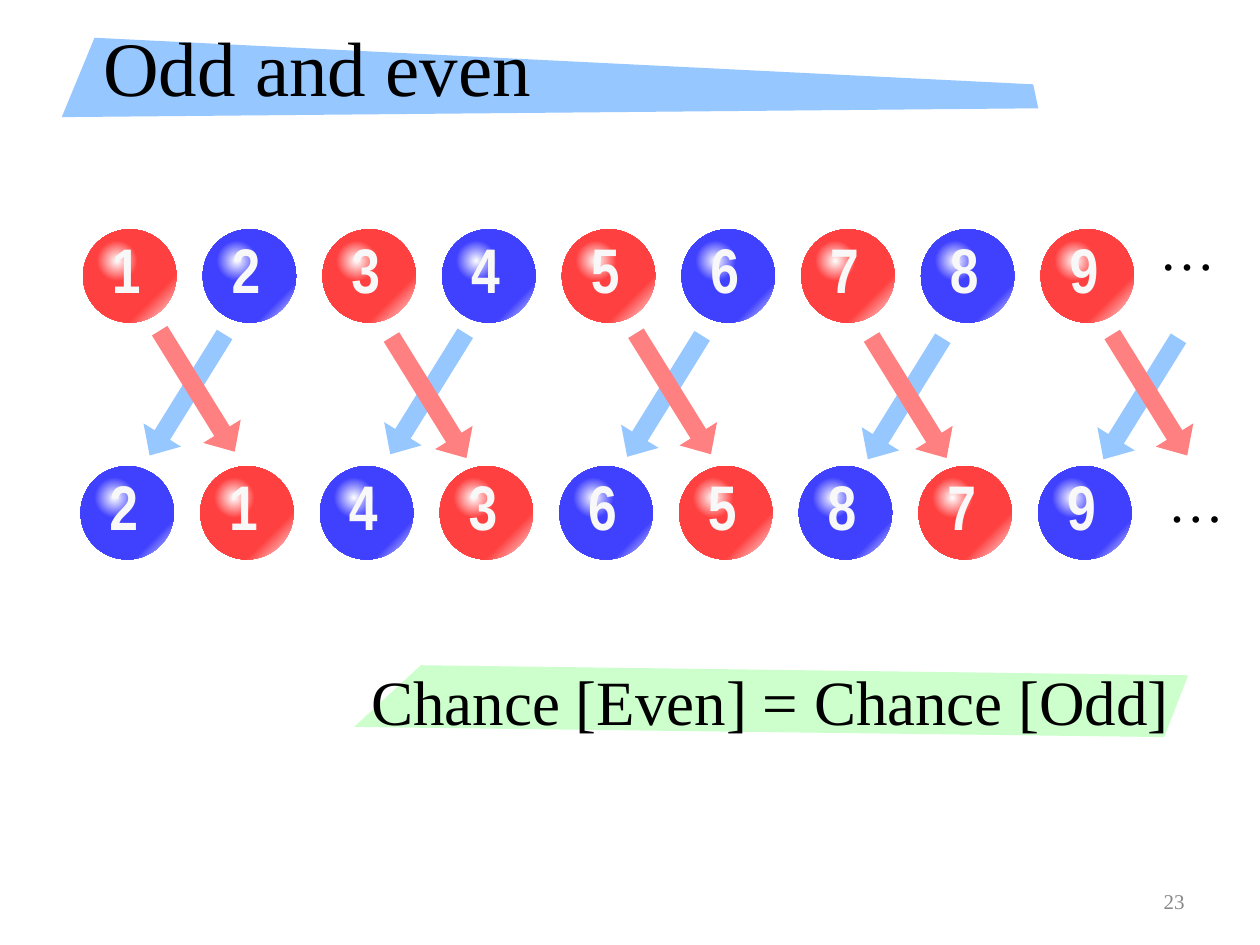
import lxml.etree
import pptx
import pptx.dml.color
import pptx.enum.shapes
import pptx.enum.text
import pptx.util

Inches = pptx.util.Inches
SHAPE = pptx.enum.shapes.MSO_SHAPE
ANCHOR = pptx.enum.text.MSO_ANCHOR
ALIGN = pptx.enum.text.PP_ALIGN
DRAWING_NS = "http://schemas.openxmlformats.org/drawingml/2006/main"

COLORS = {
    "odd": "FF4040",
    "even": "4040FF",
    "odd_arrow": "FF8080",
    "even_arrow": "96C7FF",
    "title_band": "96C7FF",
    "result_band": "CCFFCC",
    "highlight": "FFFFFF",
    "digit": "F8F8F8",
    "text": "000000",
    "page": "898989",
}
PITCH = 0.95
BALL_SIZE = 0.74
SHINE_SIZE = 0.36


def rgb(name):
    return pptx.dml.color.RGBColor.from_string(COLORS[name])


class Board:
    """Holds the text style and the current slide."""

    serif = "Times New Roman"
    digit_font = "Arial Narrow"

    def __init__(self, slide):
        self.slide = slide
        self.shapes = slide.shapes

    def format_text(self, frame, text, size, color="text", font=None, align=ALIGN.LEFT):
        frame.text = text
        line = frame.paragraphs[0]
        line.alignment = align
        line.font.name = font or self.serif
        line.font.size = pptx.util.Pt(size)
        line.font.color.rgb = rgb(color)
        return line

    def title(self, text, left, top, width, height):
        title = self.shapes.title
        title.left, title.top = Inches(left), Inches(top)
        title.width, title.height = Inches(width), Inches(height)
        title.text_frame.auto_size = pptx.enum.text.MSO_AUTO_SIZE.NONE
        title.text_frame.vertical_anchor = ANCHOR.MIDDLE
        self.format_text(title.text_frame, text, 44)
        self.shapes._spTree.append(title._element)  # in front of its band

    def label(self, text, left, top, width, height, size, wrap=False,
              anchor=ANCHOR.TOP, **style):
        box = self.shapes.add_textbox(
            Inches(left), Inches(top), Inches(width), Inches(height))
        box.text_frame.word_wrap = wrap
        box.text_frame.vertical_anchor = anchor
        return self.format_text(box.text_frame, text, size, **style)

    def finish(self, shape, color=None):
        shape.shadow.inherit = False
        shape.line.fill.background()
        if color:
            shape.fill.solid()
            shape.fill.fore_color.rgb = rgb(color)

    def band(self, corners, color):
        points = [(Inches(x), Inches(y)) for x, y in corners]
        outline = self.shapes.build_freeform(*points[0])
        outline.add_line_segments(points[1:], close=True)
        self.finish(outline.convert_to_shape(), color)

    def glowing_circle(self, left, top, size, stops, focus):
        """Circle with a radial gradient; focus is (left, top, right, bottom) in percent."""
        circle = self.shapes.add_shape(
            SHAPE.OVAL, Inches(left), Inches(top), Inches(size), Inches(size))
        self.finish(circle)
        stop_xml = "".join(
            f'<a:gs pos="{position * 1000}"><a:srgbClr val="{COLORS[color]}"/></a:gs>'
            for position, color in stops)
        focus_xml = " ".join(
            f'{side}="{percent * 1000}"' for side, percent in zip("ltrb", focus))
        gradient = lxml.etree.fromstring(
            f'<a:gradFill xmlns:a="{DRAWING_NS}" rotWithShape="1">'
            f'<a:gsLst>{stop_xml}</a:gsLst>'
            f'<a:path path="circle"><a:fillToRect {focus_xml}/></a:path></a:gradFill>')
        circle._element.spPr.find(f"{{{DRAWING_NS}}}prstGeom").addnext(gradient)

    def ball(self, left, top, kind):
        edge = 74 if kind == "odd" else 78
        self.glowing_circle(left, top, BALL_SIZE,
                            [(0, kind), (edge, kind), (100, "highlight")],
                            (0, 0, 100, 100))
        self.glowing_circle(left + 0.09, top + 0.07, SHINE_SIZE,
                            [(0, "highlight"), (64, kind), (100, kind)],
                            (50, 50, 50, 50))

    def digit(self, text, left, top):
        line = self.label(text, left, top, 0.55, 0.71, 36, wrap=True,
                          color="digit", font=self.digit_font)
        line.font.bold = True
        line.runs[0].font._element.set("spc", "150")

    def ball_row(self, digits, kinds, left, top, digit_left):
        for column, (digit, kind) in enumerate(zip(digits, kinds)):
            self.ball(left + column * PITCH, top, kind)
            self.digit(digit, digit_left + column * PITCH, top - 0.04)

    def arrow(self, left, top, rotation, color):
        arrow = self.shapes.add_shape(
            SHAPE.RIGHT_ARROW, Inches(left), Inches(top), Inches(1.13), Inches(0.35))
        arrow.adjustments[0] = 0.412
        arrow.adjustments[1] = 0.545
        arrow.rotation = rotation
        self.finish(arrow, color)


def main():
    deck = pptx.Presentation()
    deck.slide_width, deck.slide_height = Inches(10), Inches(7.5)
    board = Board(deck.slides.add_slide(deck.slide_layouts[5]))

    board.band([(0.75, 0.3), (8.2, 0.67), (8.24, 0.86), (0.49, 0.93)], "title_band")
    board.title("Odd and even", 0.72, -0.03, 8.76, 1.1)
    board.label("23", 7.17, 6.95, 2.33, 0.4, 12, wrap=True, anchor=ANCHOR.MIDDLE,
                color="page", align=ALIGN.RIGHT)

    board.ball_row("123456789", ["odd", "even"] * 4 + ["odd"], 0.66, 1.82, 0.79)
    board.ball_row("214365879", ["even", "odd"] * 4 + ["even"], 0.64, 3.7, 0.77)

    even_moves = [(0.92, 2.96), (2.83, 2.95), (4.71, 2.97), (6.62, 2.99), (8.49, 2.99)]
    odd_moves = [(1, 2.93), (2.84, 2.98), (4.78, 2.95), (6.65, 2.98), (8.56, 2.96)]
    for left, top in even_moves:
        board.arrow(left, top, 121.8, "even_arrow")
    for left, top in odd_moves:
        board.arrow(left, top, 58.2, "odd_arrow")

    for left, top in [(9.1, 1.65), (9.17, 3.65)]:
        board.label("…", left, top, 0.65, 0.64, 32)

    board.band([(3.34, 5.28), (9.43, 5.36), (9.24, 5.85), (2.81, 5.77)], "result_band")
    board.label("Chance [Even] = Chance [Odd]", 2.85, 5.21, 6.6, 0.71, 36)

    deck.save("out.pptx")


if __name__ == "__main__":
    main()
